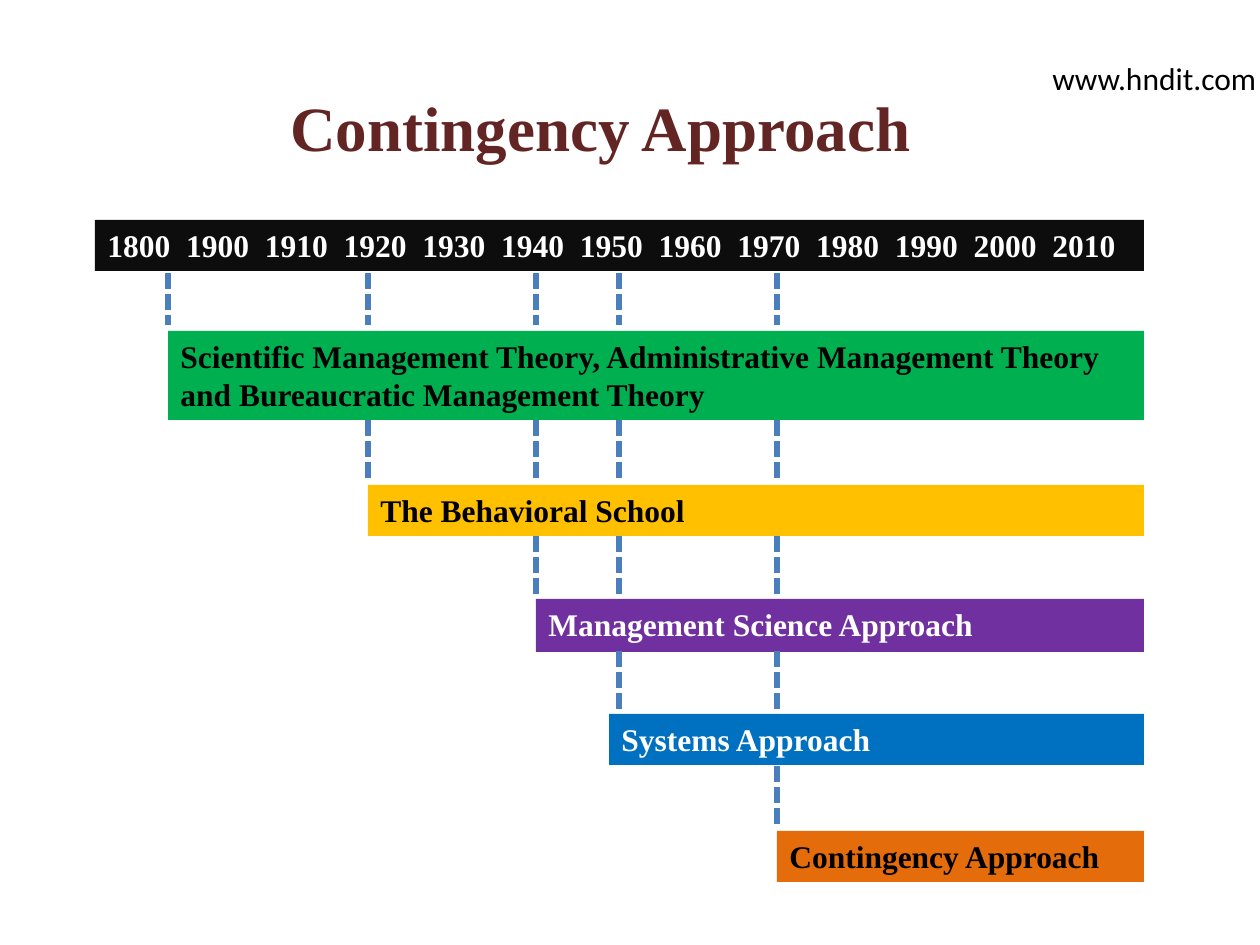
from lxml import etree
from pptx import Presentation
from pptx import util as u
from pptx.dml.color import RGBColor
from pptx.enum import dml, shapes, text
from pptx.oxml.ns import qn

BLACK = RGBColor(0x00, 0x00, 0x00)
WHITE = RGBColor(0xFF, 0xFF, 0xFF)
INK = RGBColor(0x0D, 0x0D, 0x0D)
GREEN = RGBColor(0x00, 0xB0, 0x50)
AMBER = RGBColor(0xFF, 0xC0, 0x00)
PURPLE = RGBColor(0x70, 0x30, 0xA0)
BLUE = RGBColor(0x00, 0x70, 0xC0)
ORANGE = RGBColor(0xE4, 0x6C, 0x0A)
MAROON = RGBColor(0x63, 0x25, 0x23)
DASH = RGBColor(0x4B, 0x7E, 0xBC)

PX_PER_INCH = 126
RIGHT = 1144
YEAR_STEP = u.Inches(0.625)
YEARS = [1800, *range(1900, 2011, 10)]

# label, left, top, height, fill, text colour, x of its date line
SCHOOLS = [
    ("Scientific Management Theory, Administrative Management Theory "
     "and Bureaucratic Management Theory", 168, 331, 89, GREEN, BLACK, 168),
    ("The Behavioral School", 368, 485, 51, AMBER, BLACK, 368),
    ("Management Science Approach", 536, 599, 53, PURPLE, WHITE, 536),
    ("Systems Approach", 609, 714, 51, BLUE, WHITE, 619),
    ("Contingency Approach", 777, 831, 51, ORANGE, BLACK, 777),
]
# top and bottom of the dashed lines above each school
GAPS = [(273, 325), (420, 483), (536, 599), (651, 714), (766, 829)]


def px(n):
    return u.Emu(round(n * 914400 / PX_PER_INCH))


class Deck:
    """Holds the style and the current slide."""

    heading = {"name": "Times New Roman", "size": u.Pt(18), "bold": True}
    title = {**heading, "size": u.Pt(36)}
    plain = {"name": "Calibri", "size": u.Pt(18), "bold": False}

    def __init__(self):
        self.prs = Presentation()
        self.prs.slide_width, self.prs.slide_height = u.Inches(10), u.Inches(7.5)
        self.s = self.prs.slides.add_slide(self.prs.slide_layouts[6])

    def put_text(self, sp, words, color, font, align=text.PP_ALIGN.LEFT, tabs=()):
        tf = sp.text_frame
        frame = {"word_wrap": True, "vertical_anchor": text.MSO_ANCHOR.TOP}
        for name, value in frame.items():
            setattr(tf, name, value)
        p = tf.paragraphs[0]
        p.alignment = align
        if tabs:
            tab_list = etree.SubElement(p._p.get_or_add_pPr(), qn("a:tabLst"))
            for pos in tabs:
                etree.SubElement(tab_list, qn("a:tab"), pos=str(pos), algn="l")
        r = p.add_run()
        r.text = words
        for name, value in font.items():
            setattr(r.font, name, value)
        r.font.color.rgb = color

    def bar(self, words, left, top, height, fill, color, tabs=()):
        """Add a filled bar that runs to the common right edge."""
        sp = self.s.shapes.add_shape(
            shapes.MSO_SHAPE.RECTANGLE,
            px(left), px(top), px(RIGHT - left), px(height))
        sp.shadow.inherit = False
        sp.fill.solid()
        sp.fill.fore_color.rgb = fill
        sp.line.fill.background()
        self.put_text(sp, words, color, self.heading, tabs=tabs)

    def label(self, words, box, color, font, align=text.PP_ALIGN.LEFT, inset=6):
        sp = self.s.shapes.add_textbox(*map(px, box))
        sp.text_frame.margin_top = px(inset)
        self.put_text(sp, words, color, font, align)

    def date_line(self, x, top, bottom):
        line = self.s.shapes.add_connector(
            shapes.MSO_CONNECTOR.STRAIGHT, px(x), px(top), px(x), px(bottom))
        etree.SubElement(line._element.spPr, qn("a:effectLst"))
        line.line.color.rgb = DASH
        line.line.width = u.Pt(3)
        line.line.dash_style = dml.MSO_LINE.SQUARE_DOT


def main():
    deck = Deck()
    tabs = [YEAR_STEP * i for i in range(1, len(YEARS))]
    deck.bar("\t".join(map(str, YEARS)), 95, 220, 51, INK, WHITE, tabs)
    for i, (*school, _) in enumerate(SCHOOLS):
        deck.bar(*school)
        for *_, x in SCHOOLS[i:]:
            deck.date_line(x, *GAPS[i])
    deck.label("Contingency Approach", (65, 0, 1071, 242), MAROON, deck.title,
               text.PP_ALIGN.CENTER, inset=89)
    deck.label("www.hndit.com", (1040, 53, 242, 51), BLACK, deck.plain)
    deck.prs.save("out.pptx")


if __name__ == "__main__":
    main()
